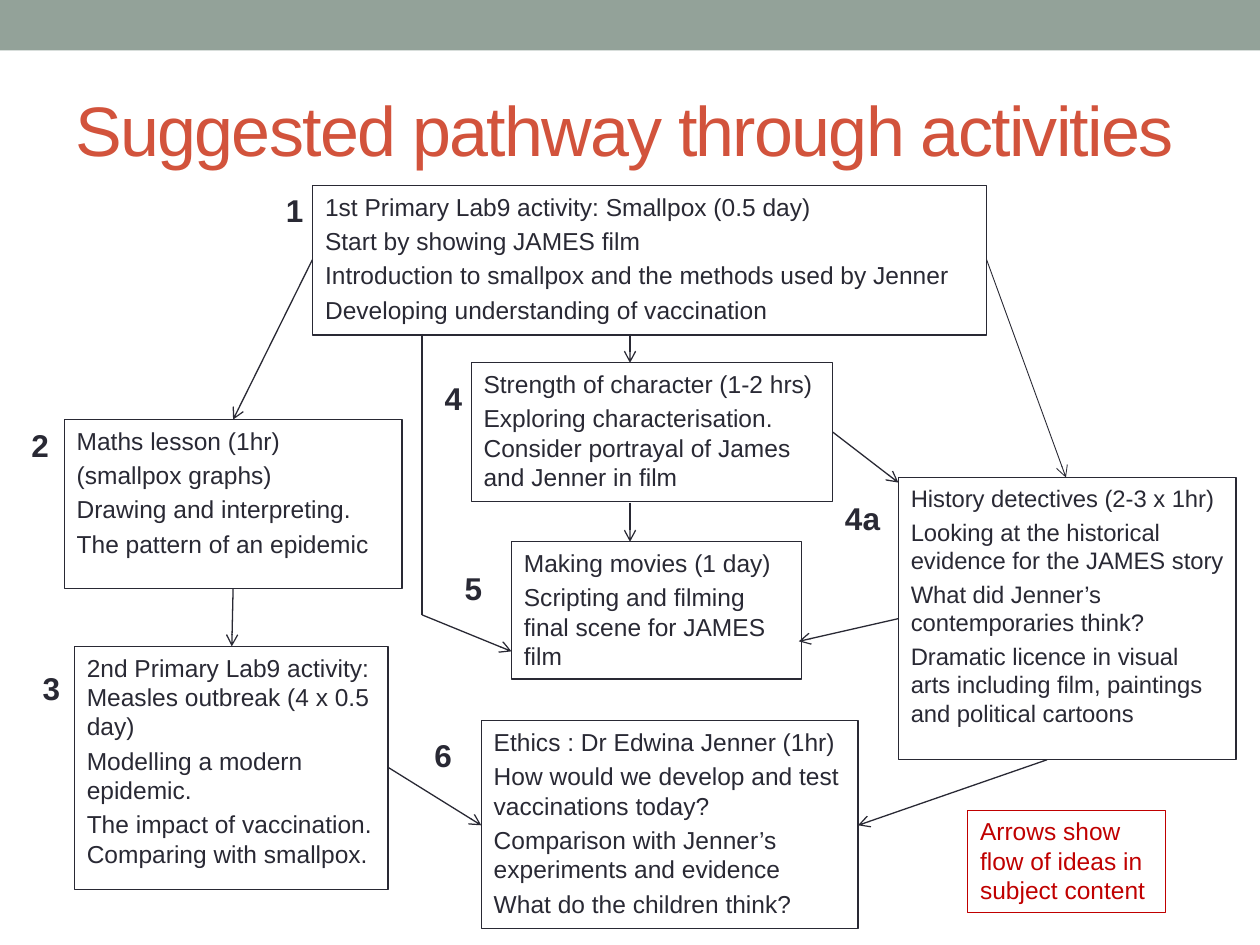
from dataclasses import dataclass

from lxml.etree import SubElement as Sub
from pptx import Presentation
from pptx.dml.color import RGBColor as RGB
from pptx.enum.shapes import MSO_CONNECTOR as Link, MSO_SHAPE as Shape
from pptx.enum.text import MSO_ANCHOR as Anchor, MSO_AUTO_SIZE as Fit, PP_ALIGN as Align
from pptx.oxml.ns import qn
from pptx.util import Inches, Pt


@dataclass(frozen=True)
class Theme:
    font: str = "Arial"
    ink: str = "292934"
    band: str = "93A299"
    title: str = "D2533C"
    alert: str = "C00000"
    head: float = 40
    mark: float = 18
    text: float = 14
    small: float = 13.6
    gap: float = 2.8
    rule: float = 0.75
    thin: float = 0.5


T = Theme()

TITLE = "Suggested pathway through activities"

START = ((2.48, 1.47, 5.35, 1.19), [
    "1st Primary Lab9 activity: Smallpox (0.5 day)",
    "Start by showing JAMES film",
    "Introduction to smallpox and the methods used by Jenner",
    "Developing understanding of vaccination"])

# Position, text size, paragraphs
STEPS = [
    ((0.59, 5.13, 2.49, 1.93), T.text, [
        "2nd Primary Lab9 activity: Measles outbreak (4 x 0.5 day)",
        "Modelling a modern epidemic.",
        "The impact of vaccination. Comparing with smallpox."]),
    ((3.74, 2.88, 2.87, 1.1), T.text, [
        "Strength of character (1-2 hrs)",
        "Exploring characterisation. Consider portrayal of James and Jenner in film"]),
    ((4.06, 4.3, 2.3, 1.09), T.text, [
        "Making movies (1 day)",
        "Scripting and filming final scene for JAMES film"]),
    ((7.13, 3.79, 2.68, 2.24), T.small, [
        "History detectives (2-3 x 1hr)",
        "Looking at the historical evidence for the JAMES story",
        "What did Jenner’s contemporaries think?",
        "Dramatic licence in visual arts including film, paintings and political cartoons"]),
    ((0.51, 3.33, 2.68, 1.34), T.text, [
        "Maths lesson (1hr)",
        "(smallpox graphs)",
        "Drawing and interpreting.",
        "The pattern of an epidemic"]),
    ((3.82, 5.72, 2.99, 1.65), T.text, [
        "Ethics : Dr Edwina Jenner (1hr)",
        "How would we develop and test vaccinations today?",
        "Comparison with Jenner’s experiments and evidence",
        "What do the children think?"]),
]

LEGEND = ((7.68, 6.43, 1.57, 0.81), ["Arrows show flow of ideas in subject content"])

# Label, left, top, width, alignment
MARKS = [
    ("1", 2.17, 1.47, 0.24, Align.LEFT),
    ("2", 0.15, 3.33, 0.24, Align.LEFT),
    ("3", 0.24, 5.26, 0.24, Align.LEFT),
    ("4", 3.43, 2.96, 0.24, Align.CENTER),
    ("5", 3.59, 4.47, 0.24, Align.LEFT),
    ("6", 3.35, 5.79, 0.24, Align.LEFT),
    ("4a", 6.57, 3.91, 0.55, Align.CENTER),
]

# Start and end of each arrow
ARROWS = [
    (2.48, 2.06, 1.85, 3.33),
    (1.85, 4.67, 1.84, 5.13),
    (6.61, 3.43, 7.13, 3.83),
    (7.13, 4.91, 6.34, 5.09),
    (3.08, 6.09, 3.82, 6.55),
    (3.35, 4.88, 4.06, 5.17),
    (5, 2.65, 5, 2.88),
    (5, 3.99, 5, 4.3),
    (8.31, 6.03, 6.81, 6.55),
]


def place(shape, spot):
    shape.left, shape.top, shape.width, shape.height = map(Inches, spot)


def write(shape, lines, size, color=T.ink, bold=False, align=Align.LEFT,
          gap=0, anchor=Anchor.TOP):
    frame = shape.text_frame
    frame.text = "\n".join(lines)
    frame.word_wrap = True
    frame.auto_size = Fit.NONE
    frame.vertical_anchor = anchor
    for para in frame.paragraphs:
        para.alignment = align
        para.space_before = Pt(gap)
        for run in para.runs:
            font = run.font
            font.name, font.size, font.bold = T.font, Pt(size), bold
            font.color.rgb = RGB.from_string(color)


def border(shape, color=T.ink, width=T.rule):
    shape.line.color.rgb = RGB.from_string(color)
    shape.line.width = Pt(width)


def add_band(slide):
    band = slide.shapes.add_shape(Shape.RECTANGLE, 0, 0, Inches(10), Inches(0.4))
    band.shadow.inherit = False
    band.fill.solid()
    band.fill.fore_color.rgb = RGB.from_string(T.band)
    band.line.fill.background()


def add_title(slide):
    title = slide.shapes.title
    place(title, (0.5, 0.58, 9, 0.88))
    write(title, [TITLE], T.head, T.title, anchor=Anchor.MIDDLE)
    # Tighten the letter spacing
    for run in title.text_frame.paragraphs[0].runs:
        run.font._element.set("spc", "-100")


def add_start(slide):
    spot, lines = START
    body = slide.placeholders[1]
    place(body, spot)
    write(body, lines, T.text, gap=T.gap)
    border(body)
    # Plain paragraphs without bullets
    for para in body.text_frame.paragraphs:
        props = para._p.get_or_add_pPr()
        props.set("marL", "0")
        props.set("indent", "0")
        Sub(props, qn("a:buNone"))


def add_box(slide, spot, lines, size=T.text, color=T.ink, gap=T.gap):
    box = slide.shapes.add_shape(Shape.RECTANGLE, *map(Inches, spot))
    box.shadow.inherit = False
    box.fill.background()
    border(box, color)
    write(box, lines, size, color, gap=gap)


def add_mark(slide, label, left, top, width, align):
    mark = slide.shapes.add_textbox(*map(Inches, (left, top, width, 0.4)))
    write(mark, [label], T.mark, bold=True, align=align)


def add_line(slide, ends, width=T.rule, arrow=True):
    line = slide.shapes.add_connector(Link.STRAIGHT, *map(Inches, ends))
    border(line, width=width)
    if arrow:
        Sub(line.line._get_or_add_ln(), qn("a:tailEnd"), type="arrow")
    Sub(line._element.spPr, qn("a:effectLst"))


def main():
    deck = Presentation()
    deck.slide_width, deck.slide_height = Inches(10), Inches(7.5)
    slide = deck.slides.add_slide(deck.slide_layouts[1])

    # Heading
    add_band(slide)
    add_title(slide)

    # Activities and their numbers
    add_start(slide)
    for spot, size, lines in STEPS:
        add_box(slide, spot, lines, size)
    for mark in MARKS:
        add_mark(slide, *mark)

    # Flow of ideas
    for ends in ARROWS:
        add_line(slide, ends)
    add_line(slide, (7.83, 2.06, 8.46, 3.79), width=T.thin)
    add_line(slide, (3.35, 2.65, 3.35, 4.88), arrow=False)

    # Legend
    spot, lines = LEGEND
    add_box(slide, spot, lines, color=T.alert, gap=0)

    deck.save("out.pptx")


if __name__ == "__main__":
    main()
